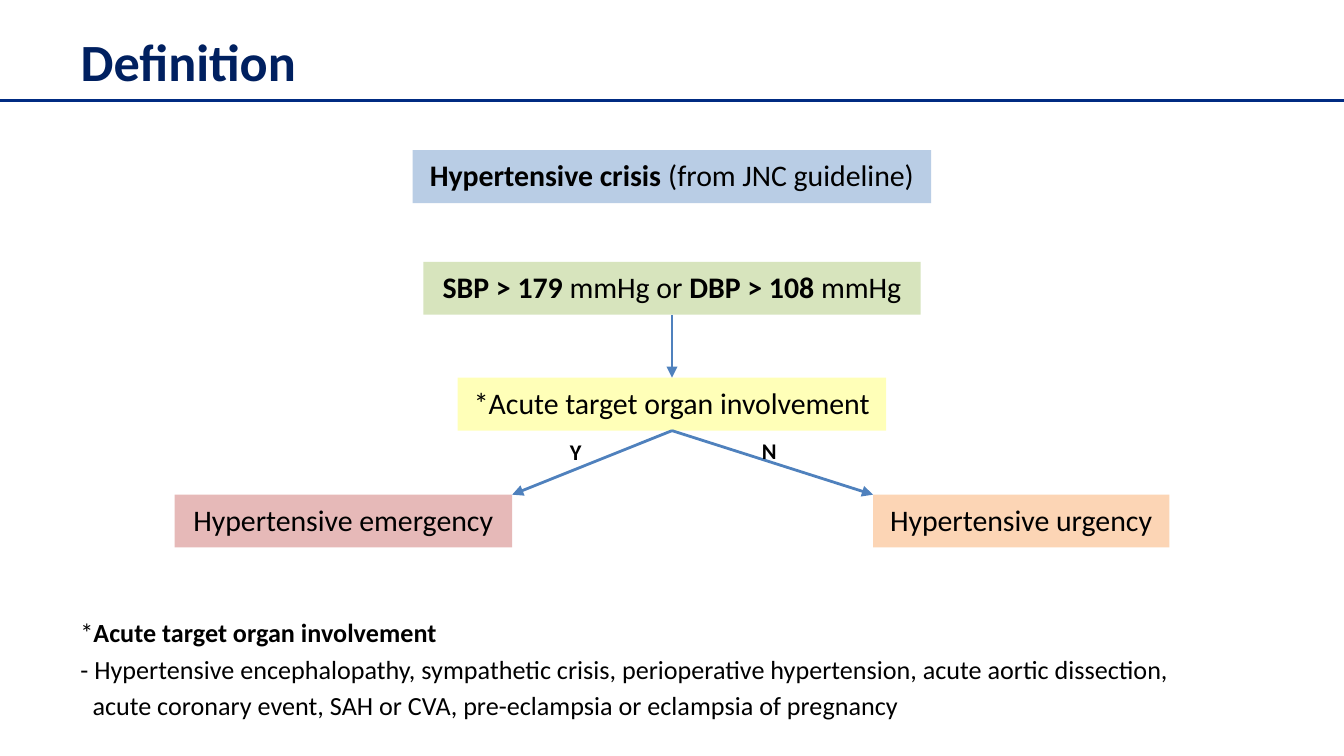
import pptx
import pptx.util
import pptx.dml.color
import pptx.enum.shapes
import pptx.enum.text
import pptx.oxml.ns
from lxml import etree

Cm, Pt = pptx.util.Cm, pptx.util.Pt
ALIGN = pptx.enum.text.PP_ALIGN
ANCHOR = pptx.enum.text.MSO_ANCHOR
qn = pptx.oxml.ns.qn

COLORS = {
    "title": "002060", "rule": "002B82", "arrow": "4F81BD", "text": "000000",
    "crisis": "B9CDE5", "criteria": "D7E4BD", "organ": "FFFF00",
    "emergency": "E6B9B8", "urgency": "FCD5B5", "note": "FFFFFF",
}
OPACITY = {"organ": 28, "note": 28}  # percent

SLIDE_W, SLIDE_H = 25.4, 14.29
CENTER = SLIDE_W / 2
BOX_H = 1
SIDE_MARGIN = 3.3

# A line of text is a list of (text, bold) runs.
TITLE = [[("Definition", True)]]
# name: (center x, top, width, lines)
BOXES = {
    "crisis": (CENTER, 2.84, 9.8,
               [[("Hypertensive crisis", True), (" (from JNC guideline)", False)]]),
    "criteria": (CENTER, 4.95, 9.4,
                 [[("SBP > 179 ", True), ("mmHg or ", False),
                   ("DBP > 108 ", True), ("mmHg", False)]]),
    "organ": (CENTER, 7.14, 8.1, [[("*Acute target organ involvement", False)]]),
    "emergency": (SIDE_MARGIN + 6.38 / 2, 9.35, 6.38,
                  [[("Hypertensive emergency", False)]]),
    "urgency": (SLIDE_W - SIDE_MARGIN - 5.6 / 2, 9.35, 5.6,
                [[("Hypertensive urgency", False)]]),
}
BRANCH_LABELS = [("Y", 10.52, 8.15), ("N", 14.15, 8.13)]
NOTE = [
    [("*", False), ("Acute target organ involvement", True)],
    [("- Hypertensive encephalopathy, sympathetic crisis, perioperative hypertension, "
      "acute aortic dissection,", False)],
    [("acute coronary event, SAH or CVA, pre-eclampsia or eclampsia of pregnancy", False)],
]


def rgb(name):
    return pptx.dml.color.RGBColor.from_string(COLORS[name])


def write(frame, lines, size, color="text", align=ALIGN.LEFT, anchor=ANCHOR.TOP,
          space=0, wrap=True):
    """Fill a text frame; space is the gap before a line as a share of its size."""
    frame.word_wrap = wrap
    frame.vertical_anchor = anchor
    for i, line in enumerate(lines):
        paragraph = frame.paragraphs[0] if i == 0 else frame.add_paragraph()
        paragraph.alignment = align
        paragraph.space_before = Pt(size * space)
        for text, bold in line:
            run = paragraph.add_run()
            run.text = text
            run.font.name = "Calibri"
            run.font.size = Pt(size)
            run.font.bold = bold
            run.font.color.rgb = rgb(color)


def add_box(slide, name, left, top, width, height, lines, size, **text_format):
    box = slide.shapes.add_shape(pptx.enum.shapes.MSO_SHAPE.RECTANGLE,
                                 Cm(left), Cm(top), Cm(width), Cm(height))
    box.shadow.inherit = False
    box.line.fill.background()
    box.fill.solid()
    box.fill.fore_color.rgb = rgb(name)
    if name in OPACITY:
        color = box.fill._xPr.find(qn("a:solidFill")).find(qn("a:srgbClr"))
        etree.SubElement(color, qn("a:alpha"), val=str(OPACITY[name] * 1000))
    write(box.text_frame, lines, size, space=0.2, **text_format)
    return box


def add_line(slide, start, end, color, width, arrow=False):
    line = slide.shapes.add_connector(pptx.enum.shapes.MSO_CONNECTOR.STRAIGHT,
                                      *(Cm(v) for v in (*start, *end)))
    line.line.color.rgb = rgb(color)
    line.line.width = Pt(width)
    if arrow:
        etree.SubElement(line.line._get_or_add_ln(), qn("a:tailEnd"), type="triangle")
    etree.SubElement(line._element.spPr, qn("a:effectLst"))


def main():
    deck = pptx.Presentation()
    deck.slide_width, deck.slide_height = Cm(SLIDE_W), Cm(SLIDE_H)
    slide = deck.slides.add_slide(deck.slide_layouts[5])

    title = slide.shapes.title
    title.left, title.top, title.width, title.height = Cm(1.27), Cm(-0.05), Cm(24.13), Cm(2.4)
    write(title.text_frame, TITLE, 28, color="title", anchor=ANCHOR.MIDDLE)
    add_line(slide, (0, 1.9), (SLIDE_W, 1.9), "rule", 1.25)

    for name, (center, top, width, lines) in BOXES.items():
        add_box(slide, name, center - width / 2, top, width, BOX_H, lines, 16,
                align=ALIGN.CENTER)

    criteria_bottom = BOXES["criteria"][1] + BOX_H
    organ_top = BOXES["organ"][1]
    organ_bottom = organ_top + BOX_H
    add_line(slide, (CENTER, criteria_bottom), (CENTER, organ_top), "arrow", 1.5, arrow=True)
    for name, side in (("urgency", -1), ("emergency", 1)):
        center, top, width, _ = BOXES[name]
        inner_corner = (center + side * width / 2, top)
        add_line(slide, (CENTER, organ_bottom), inner_corner, "arrow", 1.5, arrow=True)

    note = add_box(slide, "note", 1.27, 11.53, 23.62, 2.41, NOTE, 14)
    note.text_frame.paragraphs[-1]._p.get_or_add_pPr().set("marL", str(Cm(0.23)))

    for letter, left, top in BRANCH_LABELS:
        label = slide.shapes.add_textbox(Cm(left), Cm(top), Cm(0.76), Cm(0.77))
        write(label.text_frame, [[(letter, True)]], 12, wrap=False)

    deck.save("out.pptx")


if __name__ == "__main__":
    main()
